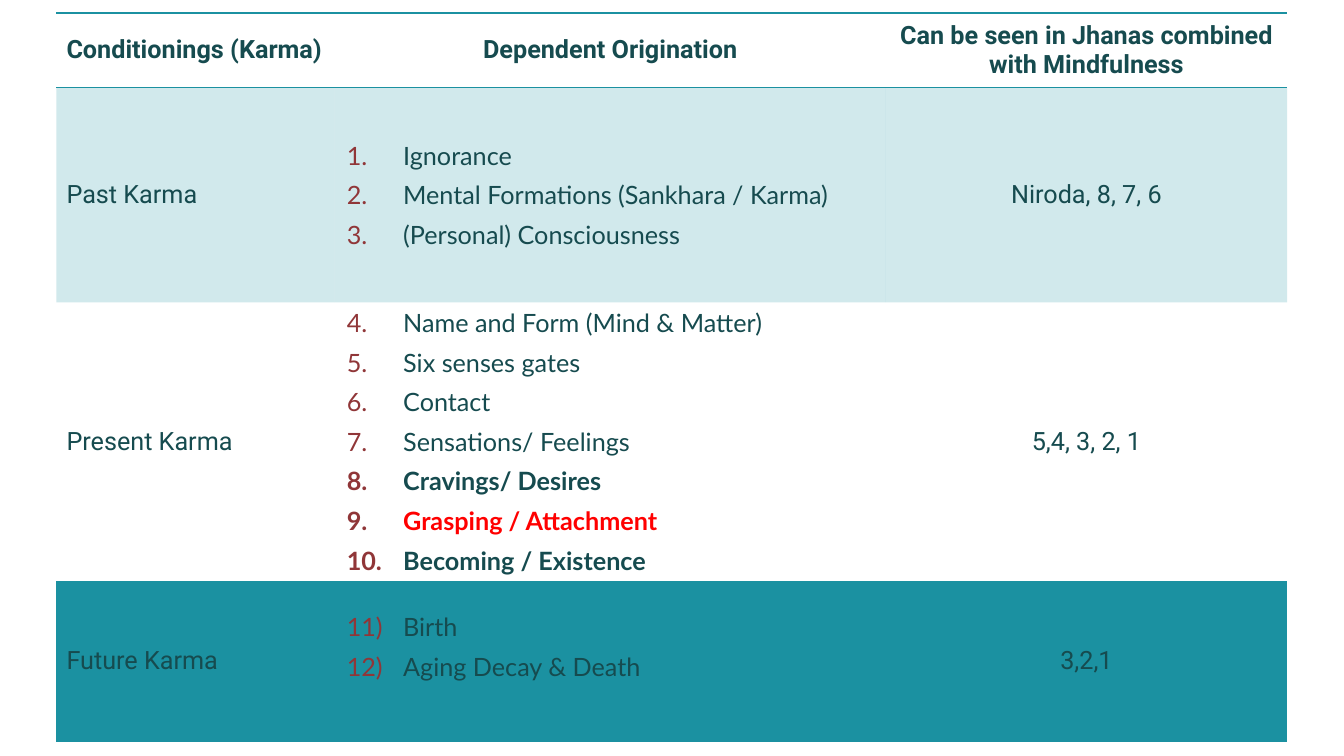
from dataclasses import dataclass

from lxml import etree
from pptx import Presentation
from pptx.dml.color import RGBColor
from pptx.enum import text
from pptx.oxml import ns
from pptx.util import Pt

COLOURS = {"ink": "164B4F", "teal": "1B91A1", "number": "903638", "alert": "FF0000"}
NO_STYLE = "{2D5ABB26-0587-4C30-8999-92F81FD0307C}"
LEFT, TOP = 40.3, 9.3
COLUMN_WIDTHS = (198.7, 393.8, 286.6)
HEADINGS = (
    "Conditionings (Karma)",
    "Dependent Origination",
    "Can be seen in Jhanas combined with Mindfulness",
)
HEADING_HEIGHT = 53.4
BAND_OPACITY = 20


@dataclass
class Link:
    words: str
    bold: bool = False
    colour: str = "ink"


@dataclass
class Stage:
    name: str
    links: list[Link]
    jhanas: str
    height: float
    start: int
    numbering: str = "arabicPeriod"
    banded: bool = False
    bottom_margin: float = 3.6


STAGES = [
    Stage("Past Karma", [
        Link("Ignorance"),
        Link("Mental Formations (Sankhara / Karma)"),
        Link("(Personal) Consciousness"),
    ], "Niroda, 8, 7, 6", 153.4, 1, banded=True),
    Stage("Present Karma", [
        Link("Name and Form (Mind & Matter)"),
        Link("Six senses gates"),
        Link("Contact"),
        Link("Sensations/ Feelings"),
        Link("Cravings/ Desires", bold=True),
        Link("Grasping / Attachment", bold=True, colour="alert"),
        Link("Becoming / Existence", bold=True),
    ], "5,4, 3, 2, 1", 198.7, 4),
    Stage("Future Karma", [
        Link("Birth"),
        Link("Aging Decay & Death"),
    ], "3,2,1", 114.5, 11, "arabicParenR", banded=True, bottom_margin=24),
]


def add_child(parent, tag: str, **attributes: str):
    """Append a DrawingML element and return it."""
    return etree.SubElement(parent, ns.qn(f"a:{tag}"), attributes)


def write(paragraph, words: str, font: str, bold: bool = False, colour: str = "ink") -> None:
    """Add one formatted run to a paragraph."""
    run = paragraph.add_run()
    run.text = words
    run.font.name = font
    run.font.size = Pt(18)
    run.font.bold = bold
    run.font.color.rgb = RGBColor.from_string(COLOURS[colour])


def fill_cell(cell, banded: bool) -> None:
    """Give a cell the translucent band or no fill."""
    cell.vertical_anchor = text.MSO_ANCHOR.MIDDLE
    if not banded:
        cell.fill.background()
        return
    cell.fill.solid()
    cell.fill.fore_color.rgb = RGBColor.from_string(COLOURS["teal"])
    colour = cell._tc.tcPr.find(".//" + ns.qn("a:srgbClr"))
    add_child(colour, "alpha", val=str(BAND_OPACITY * 1000))


def rule_cell(cell, *sides: str) -> None:
    """Draw thin teal borders on the sides given in schema order."""
    properties = cell._tc.get_or_add_tcPr()
    for position, side in enumerate(sides):
        line = add_child(properties, side, w=str(Pt(1)))
        add_child(add_child(line, "solidFill"), "srgbClr", val=COLOURS["teal"])
        properties.insert(position, line)


def write_plain(cell, words: str, centred: bool, bold: bool = False) -> None:
    """Write a cell holding a single paragraph."""
    paragraph = cell.text_frame.paragraphs[0]
    if centred:
        paragraph.alignment = text.PP_ALIGN.CENTER
    write(paragraph, words, "Roboto", bold)


def write_links(cell, stage: Stage) -> None:
    """Write the numbered links of one stage."""
    cell.margin_bottom = Pt(stage.bottom_margin)
    frame = cell.text_frame
    for index, link in enumerate(stage.links):
        paragraph = frame.add_paragraph() if index else frame.paragraphs[0]
        properties = paragraph._p.get_or_add_pPr()
        properties.set("marL", str(Pt(41.8)))
        properties.set("indent", str(Pt(-40.3)))
        add_child(add_child(properties, "buClr"), "srgbClr", val=COLOURS["number"])
        add_child(properties, "buAutoNum", type=stage.numbering, startAt=str(stage.start))
        if index:
            paragraph.space_before = Pt(6.7)
        write(paragraph, link.words, "Lato", link.bold, link.colour)


def add_karma_table(slide) -> None:
    """Add the table of karma stages and their links."""
    heights = [HEADING_HEIGHT, *(stage.height for stage in STAGES)]
    table_frame = slide.shapes.add_table(
        len(heights), len(COLUMN_WIDTHS),
        Pt(LEFT), Pt(TOP), Pt(sum(COLUMN_WIDTHS)), Pt(sum(heights)),
    )
    table = table_frame.table
    table.first_row = table.horz_banding = False
    table._tbl.tblPr.find(ns.qn("a:tableStyleId")).text = NO_STYLE
    for column, width in zip(table.columns, COLUMN_WIDTHS):
        column.width = Pt(width)
    for row, height in zip(table.rows, heights):
        row.height = Pt(height)

    for index, heading in enumerate(HEADINGS):
        cell = table.cell(0, index)
        fill_cell(cell, False)
        write_plain(cell, heading, centred=index > 0, bold=True)
        rule_cell(cell, "lnT", "lnB")
        rule_cell(table.cell(len(STAGES), index), "lnB")

    for row_index, stage in enumerate(STAGES, 1):
        name, links, jhanas = table.rows[row_index].cells
        for cell in (name, links, jhanas):
            fill_cell(cell, stage.banded)
        write_plain(name, stage.name, centred=False)
        write_links(links, stage)
        write_plain(jhanas, stage.jhanas, centred=True)


def main() -> None:
    """Build and save the presentation."""
    presentation = Presentation()
    presentation.slide_width, presentation.slide_height = Pt(960), Pt(540)
    slide = presentation.slides.add_slide(presentation.slide_layouts[6])
    add_karma_table(slide)
    presentation.save("out.pptx")


if __name__ == "__main__":
    main()
